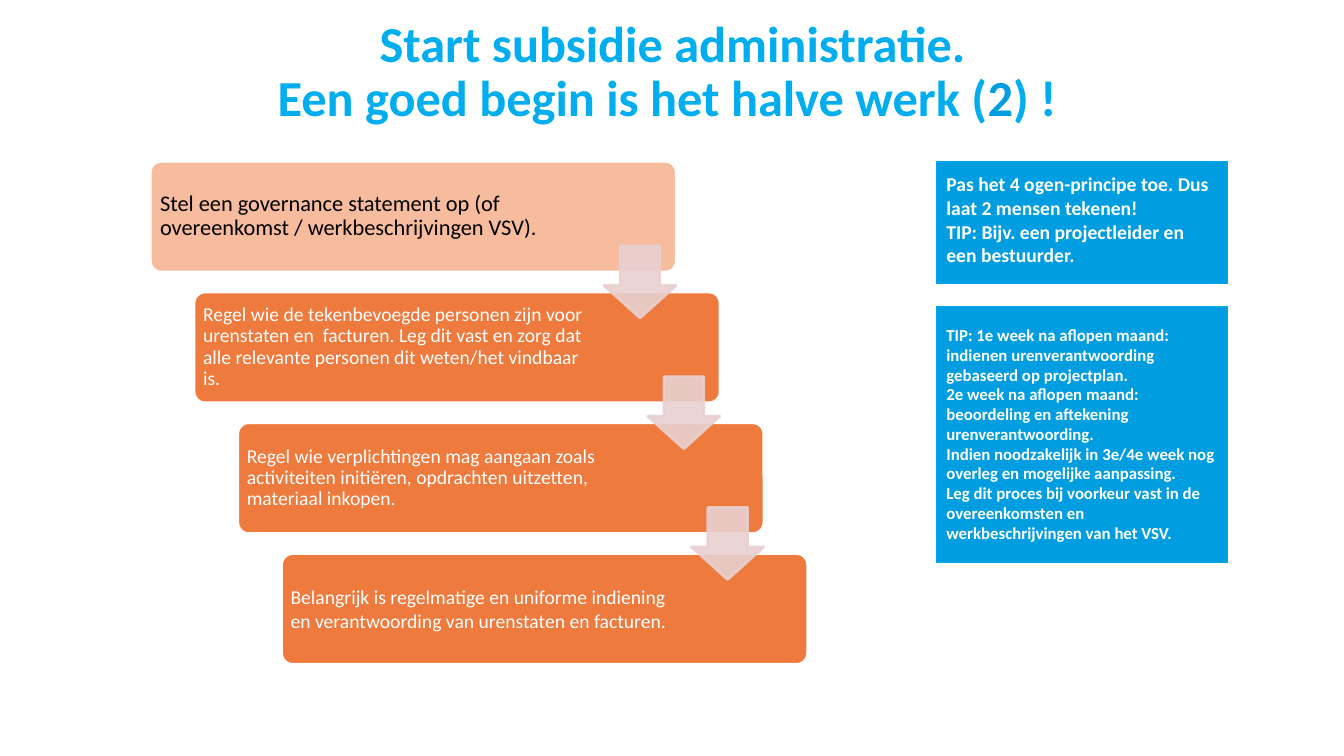
from dataclasses import dataclass

from lxml.etree import SubElement
from pptx import Presentation
from pptx.dml.color import RGBColor
from pptx.enum.shapes import MSO_SHAPE
from pptx.enum.text import MSO_ANCHOR, MSO_AUTO_SIZE, PP_ALIGN
from pptx.oxml.ns import qn
from pptx.shapes.autoshape import Shape
from pptx.slide import Slide
from pptx.text.text import TextFrame
from pptx.util import Pt

HUES = {
    "title": "00ADEE",
    "tip": "009DE0",
    "edge": "00A9E9",
    "step": "EF7A3D",
    "arrow": "E8D0D0",
    "white": "FFFFFF",
    "black": "000000",
}
FACE = "Calibri"
LEFT, TOP = 107.28, 115.2
SHIFT, DROP = 31.27, 93.4


@dataclass
class Step:
    text: str
    size: float = 14
    hue: str = "white"
    alpha: int = 100
    inset: float = 4.2
    width: float = 288
    space: float = 0.9


@dataclass
class Tip:
    top: float
    height: float
    size: float
    space: float
    foot: float
    text: str


STEPS = [
    Step("Stel een governance statement op (of overeenkomst / werkbeschrijvingen VSV).",
         16, "black", 50, 4.8, 283.68),
    Step("Regel wie de tekenbevoegde personen zijn voor urenstaten en  facturen. "
         "Leg dit vast en zorg dat alle relevante personen dit weten/het vindbaar is."),
    Step("Regel wie verplichtingen mag aangaan zoals activiteiten initiëren, "
         "opdrachten uitzetten, materiaal inkopen."),
    Step("Belangrijk is regelmatige en uniforme indiening en verantwoording "
         "van urenstaten en facturen.", space=1),
]

TIPS = [
    Tip(115.2, 87.12, 14, 1, 7.6,
        "Pas het 4 ogen-principe toe. Dus laat 2 mensen tekenen!\n"
        "TIP: Bijv. een projectleider en een bestuurder."),
    Tip(218.88, 182.88, 12, 0.98, 3.6,
        "TIP: 1e week na aflopen maand: indienen urenverantwoording "
        "gebaseerd op projectplan. \v"
        "2e week na aflopen maand: beoordeling en aftekening urenverantwoording. \v"
        "Indien noodzakelijk in 3e/4e week nog overleg en mogelijke aanpassing. \v"
        "Leg dit proces bij voorkeur vast in de overeenkomsten en "
        "werkbeschrijvingen van het VSV."),
]


def tint(name: str) -> RGBColor:
    return RGBColor.from_string(HUES[name])


def fade(shape: Shape, alpha: int) -> None:
    for color in shape.fill._xPr.iter(qn("a:srgbClr")):
        if color.get("val") != HUES["white"]:
            SubElement(color, qn("a:alpha"), val=str(alpha * 1000))


def block(slide: Slide, kind: MSO_SHAPE, box: tuple[float, ...],
          fill: str, edge: str, width: float) -> Shape:
    shape = slide.shapes.add_shape(kind, *map(Pt, box))
    shape.shadow.inherit = False
    shape.fill.solid()
    shape.fill.fore_color.rgb = tint(fill)
    shape.line.color.rgb = tint(edge)
    shape.line.width = Pt(width)
    return shape


def write(frame: TextFrame, text: str, size: float, hue: str, bold: bool = False,
          space: float = 1, align: PP_ALIGN = PP_ALIGN.LEFT) -> None:
    frame.word_wrap = True
    frame.auto_size = MSO_AUTO_SIZE.NONE
    frame.vertical_anchor = MSO_ANCHOR.MIDDLE
    frame.text = text
    for para in frame.paragraphs:
        para.alignment = align
        para.line_spacing = space
        para.space_before = Pt(0)
        para.font.name = FACE
        para.font.size = Pt(size)
        para.font.bold = bold
        para.font.color.rgb = tint(hue)


def inset(frame: TextFrame, size: float) -> None:
    frame.margin_left = frame.margin_right = Pt(size)
    frame.margin_top = frame.margin_bottom = Pt(size)


def draw_title(slide: Slide) -> None:
    title = slide.shapes.title
    title.left, title.top = Pt(113.04), Pt(36.72)
    title.width, title.height = Pt(735.12), Pt(30.96)
    frame = title.text_frame
    inset(frame, 0)
    write(frame, "Start subsidie administratie.\vEen goed begin is het halve werk (",
          36, "title", True, 0.9, PP_ALIGN.CENTER)
    para = frame.paragraphs[0]
    digit = para.add_run()
    digit.text = "2"
    digit.font.color.rgb = tint("tip")
    para.add_run().text = ") ! "


def draw_step(slide: Slide, rank: int, step: Step) -> None:
    left, top = LEFT + rank * SHIFT, TOP + rank * DROP
    card = block(slide, MSO_SHAPE.ROUNDED_RECTANGLE, (left, top, 375.84, 79.2),
                 "step", "white", 2)
    card.adjustments[0] = 0.1
    if step.alpha < 100:
        fade(card, step.alpha)
    label = slide.shapes.add_textbox(Pt(left + 2.3), Pt(top + 2.3),
                                     Pt(step.width), Pt(74.16))
    inset(label.text_frame, step.inset)
    write(label.text_frame, step.text, step.size, step.hue, space=step.space)


def draw_arrow(slide: Slide, rank: int) -> None:
    box = (431.5 + rank * SHIFT, 175.7 + rank * DROP, 51.4, 51.4)
    arrow = block(slide, MSO_SHAPE.DOWN_ARROW, box, "arrow", "arrow", 2)
    arrow.adjustments[0] = 0.55
    arrow.adjustments[1] = 0.45
    fade(arrow, 90)


def draw_tip(slide: Slide, tip: Tip) -> None:
    card = block(slide, MSO_SHAPE.RECTANGLE, (668.88, tip.top, 208.08, tip.height),
                 "tip", "edge", 0.75)
    write(card.text_frame, tip.text, tip.size, "white", True, tip.space)
    card.text_frame.margin_bottom = Pt(tip.foot)


def main() -> None:
    deck = Presentation()
    deck.slide_width, deck.slide_height = Pt(960), Pt(540)
    slide = deck.slides.add_slide(deck.slide_layouts[5])
    draw_title(slide)
    for rank, step in enumerate(STEPS):
        draw_step(slide, rank, step)
    for rank in range(len(STEPS) - 1):
        draw_arrow(slide, rank)
    for tip in TIPS:
        draw_tip(slide, tip)
    deck.save("out.pptx")


if __name__ == "__main__":
    main()
